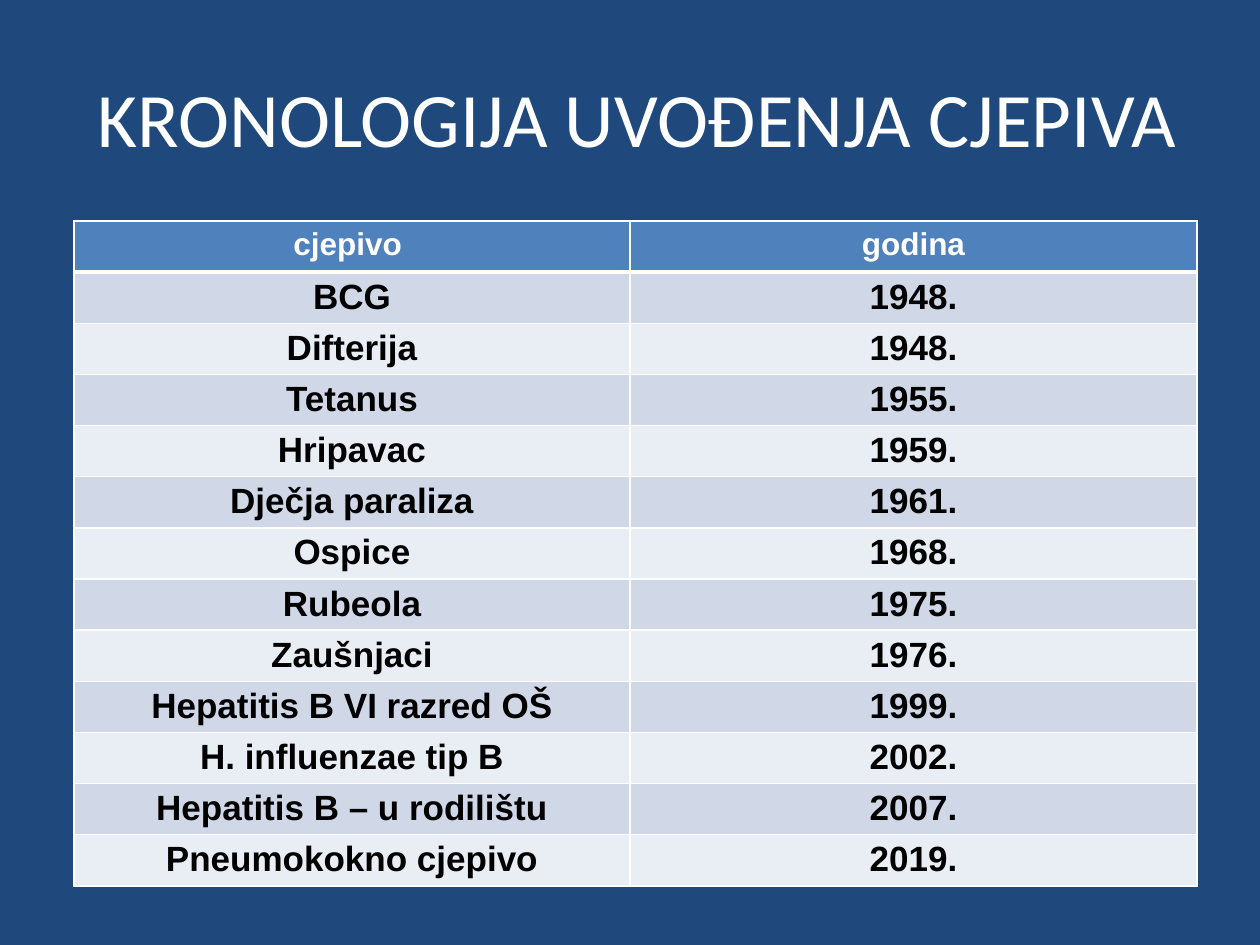
"""Slide with a table of the years in which vaccines were introduced."""
from lxml import etree
from pptx import Presentation
from pptx.dml.color import RGBColor
from pptx.enum.text import MSO_ANCHOR, PP_ALIGN
from pptx.oxml.ns import qn
from pptx.util import Pt

CENTER = PP_ALIGN.CENTER
MIDDLE = MSO_ANCHOR.MIDDLE
PX = 914400 / 126
THEME = {
    "bg": "1F497D", "white": "FFFFFF", "black": "000000", "header": "4F81BD",
    "bands": ("D0D8E8", "E9EDF4"), "title_font": "Calibri", "body_font": "Arial",
    "title_size": 44, "header_size": 18, "body_size": 20,
}
ROWS = [
    ("cjepivo ", "godina"),
    ("BCG", "1948."),
    ("Difterija", "1948."),
    ("Tetanus", "1955."),
    ("Hripavac", "1959."),
    ("Dječja paraliza", "1961."),
    ("Ospice", "1968."),
    ("Rubeola", "1975."),
    ("Zaušnjaci", "1976."),
    ("Hepatitis B VI razred OŠ", "1999."),
    ("H. influenzae tip B", "2002."),
    ("Hepatitis B – u rodilištu", "2007."),
    ("Pneumokokno cjepivo", "2019."),
]
COL_WIDTHS = (556, 567)
TABLE_HEIGHT = 665


def px(n):
    return round(n * PX)


def add_run(p, text, font, size, color, bold=False):
    p.alignment = CENTER
    r = p.add_run()
    r.text = text
    r.font.name = font
    r.font.size = Pt(size)
    r.font.bold = bold
    r.font.color.rgb = RGBColor.from_string(color)


prs = Presentation()
prs.slide_width, prs.slide_height = px(1260), px(945)
s = prs.slides.add_slide(prs.slide_layouts[6])
s.background.fill.solid()
s.background.fill.fore_color.rgb = RGBColor.from_string(THEME["bg"])

tf = s.shapes.add_textbox(px(15), px(38), px(1245), px(158)).text_frame
tf.word_wrap = True
tf.vertical_anchor = MIDDLE
add_run(tf.paragraphs[0], "KRONOLOGIJA UVOĐENJA CJEPIVA",
        THEME["title_font"], THEME["title_size"], THEME["white"])

table = s.shapes.add_table(len(ROWS), len(COL_WIDTHS), px(74), px(221),
                           px(sum(COL_WIDTHS)), px(TABLE_HEIGHT)).table
for col, width in zip(table.columns, COL_WIDTHS):
    col.width = px(width)

for i, texts in enumerate(ROWS):
    table.rows[i].height = px(TABLE_HEIGHT / len(ROWS))
    for j, text in enumerate(texts):
        cell = table.cell(i, j)
        p = cell.text_frame.paragraphs[0]
        if i == 0:
            fill, color, size = THEME["header"], THEME["white"], THEME["header_size"]
        else:
            fill, color, size = THEME["bands"][(i - 1) % 2], THEME["black"], THEME["body_size"]
            cell.margin_top = px(8)
            cell.margin_bottom = px(4)
            p.line_spacing = 0.93
            p.space_before = p.space_after = Pt(3.4)
        add_run(p, text, THEME["body_font"], size, color, True)

        tcPr = cell._tc.get_or_add_tcPr()
        for side in ("lnL", "lnR", "lnT", "lnB"):
            heavy = (i, side) in ((0, "lnB"), (1, "lnT"))
            ln = etree.SubElement(tcPr, qn(f"a:{side}"), w=str(Pt(3 if heavy else 1)))
            line_fill = etree.SubElement(ln, qn("a:solidFill"))
            etree.SubElement(line_fill, qn("a:srgbClr"), val=THEME["white"])
        cell.fill.solid()
        cell.fill.fore_color.rgb = RGBColor.from_string(fill)

prs.save("out.pptx")
